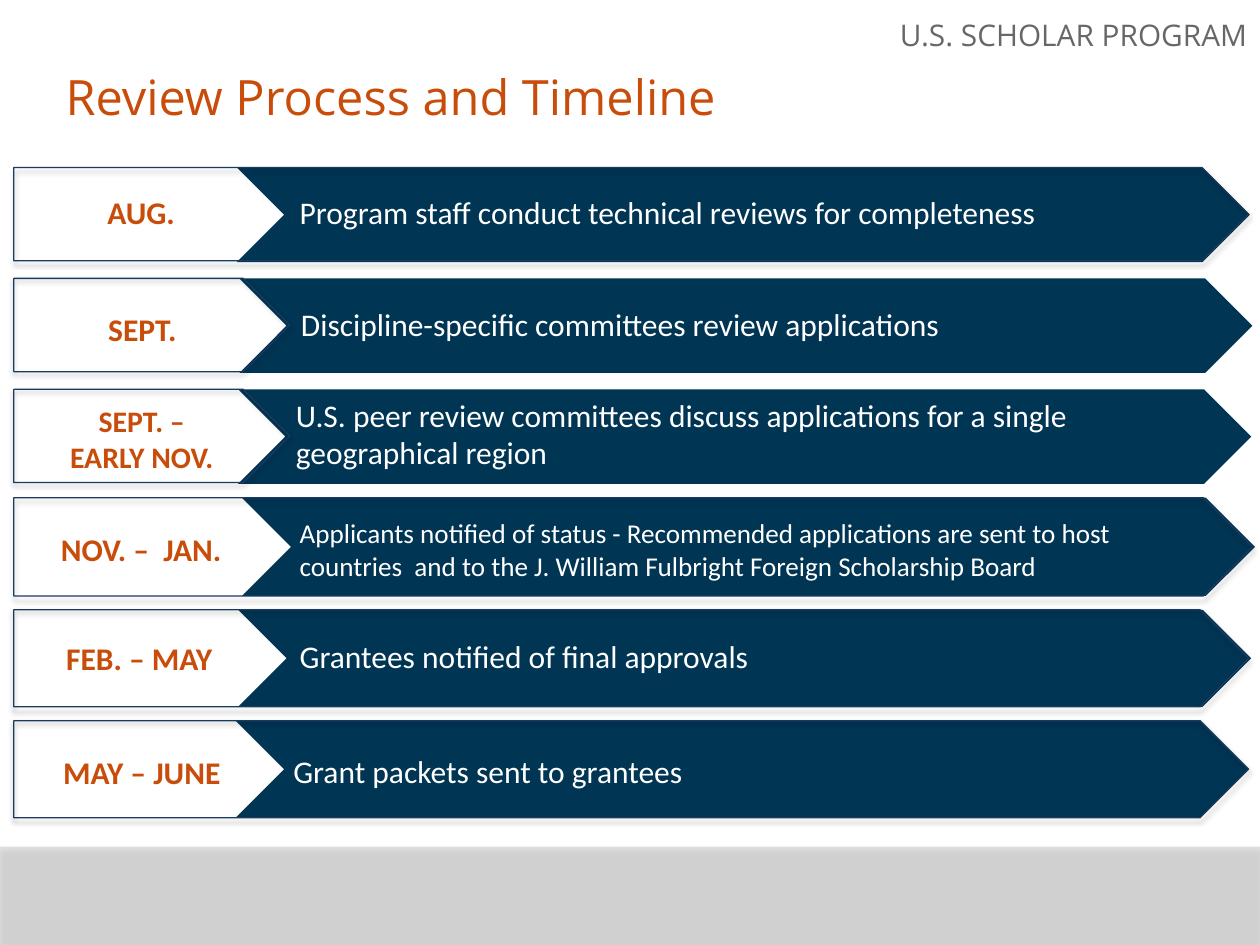
import pptx
import pptx.util
from pptx.dml.color import RGBColor
from pptx.enum.shapes import MSO_SHAPE
from pptx.enum.text import MSO_ANCHOR, MSO_AUTO_SIZE, PP_ALIGN
from pptx.oxml import parse_xml
from pptx.oxml.ns import nsdecls
from pptx.util import Inches, Pt

ORANGE = RGBColor(0xC8, 0x4D, 0x0A)
NAVY = RGBColor(0x00, 0x35, 0x54)
OUTLINE = RGBColor(0x1B, 0x3A, 0x60)
GRAY = RGBColor(0x67, 0x67, 0x67)
WHITE = RGBColor(0xFF, 0xFF, 0xFF)

TITLE = "Review Process and Timeline"
PROGRAM = "U.S. SCHOLAR PROGRAM"

# Each box is (left, top, width, height) in inches; sizes are in points.
STAGES = [
    dict(period=["AUG."], period_box=(0.62, 1.48, 1, 0.4), period_size=18,
         step="Program staff conduct technical reviews for completeness",
         step_box=(2.28, 1.48, 7.08, 0.4), step_size=18,
         band=(1.88, 1.33, 8.04, 0.75), frame=(0.11, 1.33, 9.8, 0.74)),
    dict(period=["SEPT."], period_box=(0.63, 2.41, 1, 0.4), period_size=18,
         step="Discipline-specific committees review applications",
         step_box=(2.29, 2.37, 7.08, 0.4), step_size=18,
         band=(1.9, 2.21, 8.04, 0.75), frame=(0.11, 2.21, 2.19, 0.74)),
    dict(period=["SEPT. –", "EARLY NOV."], period_box=(0.25, 3.15, 1.75, 0.67),
         period_size=17,
         step="U.S. peer review committees discuss applications for a single "
              "geographical region",
         step_box=(2.25, 3.09, 7.08, 0.71), step_size=18,
         band=(1.89, 3.09, 8.04, 0.75), frame=(0.11, 3.09, 2.19, 0.74)),
    dict(period=["NOV. –  JAN."], period_box=(0.21, 4.16, 1.82, 0.4), period_size=18,
         step="Applicants notified of status - Recommended applications are sent "
              "to host countries  and to the J. William Fulbright Foreign "
              "Scholarship Board",
         step_box=(2.28, 4.05, 7.39, 0.62), step_size=15.5,
         band=(1.92, 3.95, 8.04, 0.78), frame=(0.11, 3.95, 9.83, 0.78)),
    dict(period=["FEB. – MAY"], period_box=(-0.02, 5.02, 2.25, 0.4), period_size=18,
         step="Grantees notified of final approvals",
         step_box=(2.28, 5.01, 7.08, 0.4), step_size=18,
         band=(1.89, 4.84, 8.04, 0.77), frame=(0.11, 4.84, 9.8, 0.77)),
    dict(period=["MAY – JUNE"], period_box=(0.04, 5.93, 2.17, 0.4), period_size=18,
         step="Grant packets sent to grantees",
         step_box=(2.23, 5.92, 3.8, 0.4), step_size=18,
         band=(1.87, 5.72, 8.04, 0.77), frame=(0.11, 5.72, 9.8, 0.77)),
]


def inches(box):
    return [Inches(value) for value in box]


def add_shadow(shape, opacity, blur, distance):
    """Give the shape a soft black shadow falling straight down."""
    shape.shadow.inherit = False
    effects = shape._element.spPr.find(pptx.oxml.ns.qn("a:effectLst"))
    effects.append(parse_xml(
        f'<a:outerShdw {nsdecls("a")} blurRad="{Pt(blur)}" dist="{Pt(distance)}" '
        'dir="5400000" rotWithShape="0"><a:srgbClr val="000000">'
        f'<a:alpha val="{opacity * 1000}"/></a:srgbClr></a:outerShdw>'))


def add_plain_shape(slide, kind, box, fill=None, line=None):
    shape = slide.shapes.add_shape(kind, *inches(box))
    shape.shadow.inherit = False
    if fill is None:
        shape.fill.background()
    else:
        shape.fill.solid()
        shape.fill.fore_color.rgb = fill
    if line is None:
        shape.line.fill.background()
    else:
        shape.line.color.rgb = line
        shape.line.width = Pt(0.75)
    return shape


def write(shape, lines, size, color, font, align=PP_ALIGN.LEFT, bold=False):
    frame = shape.text_frame
    frame.word_wrap = True
    frame.auto_size = MSO_AUTO_SIZE.NONE
    frame.vertical_anchor = MSO_ANCHOR.TOP
    frame.text = "\n".join(lines)
    for paragraph in frame.paragraphs:
        paragraph.alignment = align
        for run in paragraph.runs:
            run.font.name = font
            run.font.size = Pt(size)
            run.font.bold = bold
            run.font.color.rgb = color


def add_footer(slide):
    footer = add_plain_shape(slide, MSO_SHAPE.RECTANGLE, (0, 6.72, 10, 0.78), GRAY)
    color = footer._element.spPr.find(".//" + pptx.oxml.ns.qn("a:srgbClr"))
    color.append(parse_xml(f'<a:alpha {nsdecls("a")} val="20000"/>'))
    add_shadow(footer, 38, 3.1, 1.6)


def add_headings(slide):
    title = slide.shapes.title
    title.left, title.top, title.width, title.height = inches((0.42, 0.48, 8.67, 0.52))
    write(title, [TITLE], 27.8, ORANGE, "Open Sans")
    program = slide.shapes.add_textbox(*inches((7, 0.08, 3, 0.42)))
    program.fill.solid()
    program.fill.fore_color.rgb = WHITE
    write(program, [PROGRAM], 17, GRAY, "Open Sans", PP_ALIGN.RIGHT)


def add_stage(slide, stage):
    period = slide.shapes.add_textbox(*inches(stage["period_box"]))
    write(period, stage["period"], stage["period_size"], ORANGE, "Calibri",
          PP_ALIGN.CENTER, bold=True)
    add_plain_shape(slide, MSO_SHAPE.CHEVRON, stage["band"], NAVY)
    step = slide.shapes.add_textbox(*inches(stage["step_box"]))
    write(step, [stage["step"]], stage["step_size"], WHITE, "Calibri")
    frame = add_plain_shape(slide, MSO_SHAPE.PENTAGON, stage["frame"], line=OUTLINE)
    add_shadow(frame, 35, 3.1, 1.8)


def main():
    deck = pptx.Presentation()
    deck.slide_width, deck.slide_height = Inches(10), Inches(7.5)
    slide = deck.slides.add_slide(deck.slide_layouts.get_by_name("Title Only"))
    add_footer(slide)
    add_headings(slide)
    for stage in STAGES:
        add_stage(slide, stage)
    deck.save("out.pptx")


if __name__ == "__main__":
    main()
